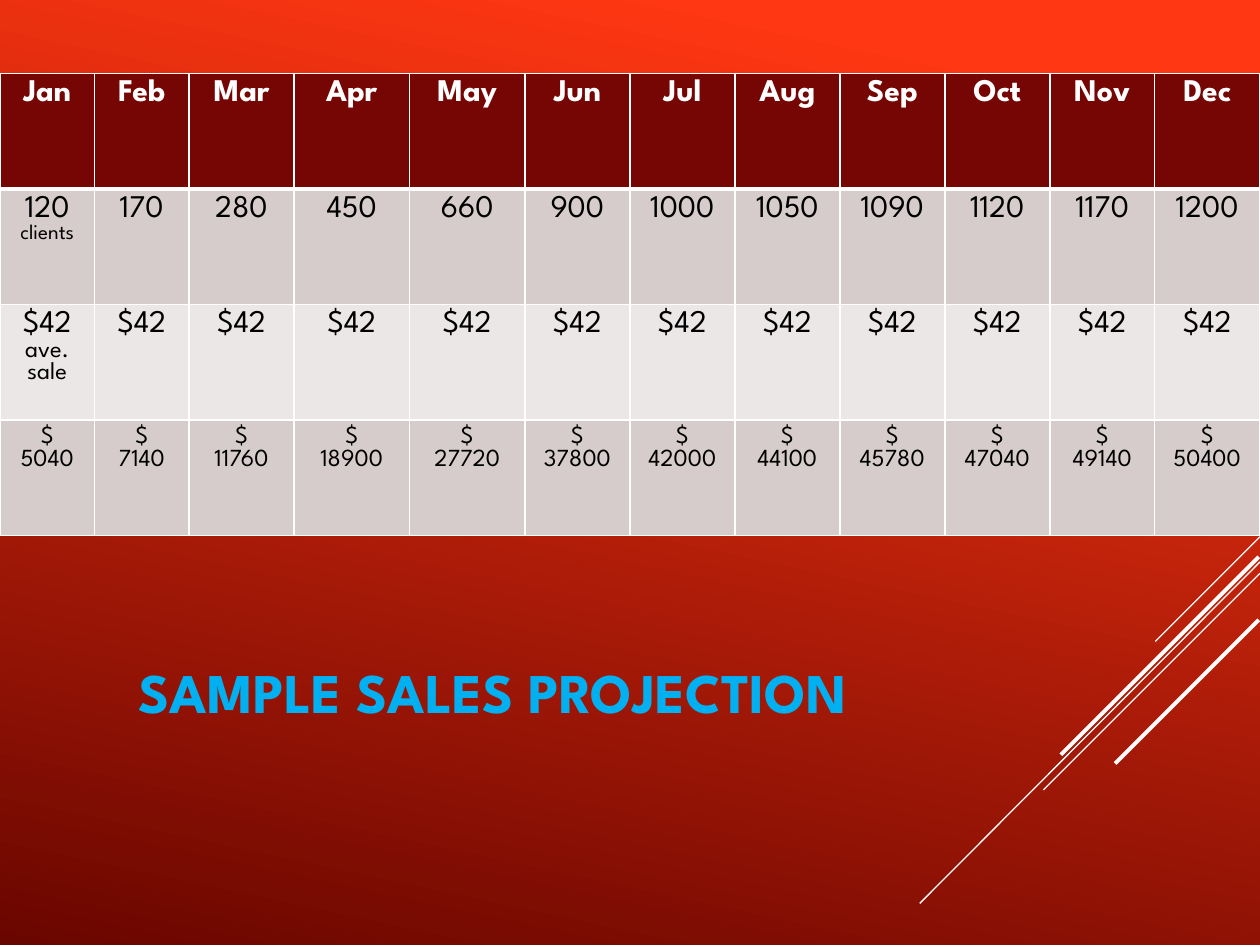
from dataclasses import dataclass

import pptx
import pptx.dml.color
import pptx.enum.shapes
import pptx.enum.text
import pptx.oxml
import pptx.oxml.ns
import pptx.util
from lxml import etree

Pt = pptx.util.Pt
RGBColor = pptx.dml.color.RGBColor
ALIGN = pptx.enum.text.PP_ALIGN

WHITE = RGBColor(0xFF, 0xFF, 0xFF)
BLACK = RGBColor(0x00, 0x00, 0x00)
BRIGHT_RED = RGBColor(0xFF, 0x37, 0x12)
DEEP_RED = RGBColor(0x6A, 0x06, 0x00)
HEADER_RED = RGBColor(0x76, 0x06, 0x03)
BAND_DARK = RGBColor(0xD6, 0xCC, 0xCC)
BAND_LIGHT = RGBColor(0xEC, 0xE7, 0xE7)
TITLE_BLUE = RGBColor(0x00, 0xB0, 0xF0)

FONT = "League Spartan"
MONTHS = "Jan Feb Mar Apr May Jun Jul Aug Sep Oct Nov Dec".split()
CLIENTS = [120, 170, 280, 450, 660, 900, 1000, 1050, 1090, 1120, 1170, 1200]
AVERAGE_SALE = 42
COLUMN_WIDTHS = [54, 54, 60, 66, 66] + [60] * 7
ROW_HEIGHT = 66
TABLE_TOP = 42


@dataclass(frozen=True)
class Stripe:
    x1: float
    y1: float
    x2: float
    y2: float
    width: float


@dataclass(frozen=True)
class Row:
    values: list[str]
    fill: RGBColor
    size: int = 18
    note: str = ""
    note_size: int = 12
    color: RGBColor = BLACK
    bold: bool = False
    top: int = 1
    bottom: int = 1


STRIPES = [
    Stripe(720, 306.7, 660.2, 366.5, 0.75),
    Stripe(720, 321.1, 525.6, 516.2, 0.75),
    Stripe(720, 327.6, 596.2, 451.4, 0.75),
    Stripe(719.3, 318.2, 606.2, 431.3, 2.25),
    Stripe(719.3, 354.2, 637.2, 436.3, 2.25),
]

ROWS = [
    Row(MONTHS, HEADER_RED, color=WHITE, bold=True, bottom=3),
    Row([str(n) for n in CLIENTS], BAND_DARK, note="clients", top=3),
    Row([f"${AVERAGE_SALE}"] * len(MONTHS), BAND_LIGHT, note="ave. sale", note_size=14),
    Row([f"$\n{n * AVERAGE_SALE}" for n in CLIENTS], BAND_DARK, size=14),
]


def write(p, text: str, *, size: float, color: RGBColor, bold: bool = False,
          align=ALIGN.CENTER) -> None:
    p.alignment = align
    r = p.add_run()
    r.text = text
    r.font.name = FONT
    r.font.size = Pt(size)
    r.font.bold = bold
    r.font.color.rgb = color


def draw_stripe(s, stripe: Stripe) -> None:
    sp = s.shapes.add_connector(
        pptx.enum.shapes.MSO_CONNECTOR.STRAIGHT,
        Pt(stripe.x1), Pt(stripe.y1), Pt(stripe.x2), Pt(stripe.y2))
    sp.line.color.rgb = WHITE
    sp.line.width = Pt(stripe.width)
    etree.SubElement(sp._element.spPr, pptx.oxml.ns.qn("a:effectLst"))


def set_borders(cell, top: int, bottom: int) -> None:
    tcPr = cell._tc.get_or_add_tcPr()
    for side, width in (("L", 1), ("R", 1), ("T", top), ("B", bottom)):
        tcPr.append(pptx.oxml.parse_xml(
            f'<a:ln{side} {pptx.oxml.ns.nsdecls("a")} w="{Pt(width)}">'
            f'<a:solidFill><a:srgbClr val="{WHITE}"/></a:solidFill></a:ln{side}>'))


def fill_row(table, index: int, row: Row) -> None:
    table.rows[index].height = Pt(ROW_HEIGHT)
    for column, value in enumerate(row.values):
        cell = table.cell(index, column)
        set_borders(cell, row.top, row.bottom)
        cell.fill.solid()
        cell.fill.fore_color.rgb = row.fill
        lines = [(text, row.size) for text in value.split("\n")]
        if row.note and column == 0:
            lines.append((row.note, row.note_size))
        tf = cell.text_frame
        for i, (text, size) in enumerate(lines):
            p = tf.add_paragraph() if i else tf.paragraphs[0]
            write(p, text, size=size, color=row.color, bold=row.bold)


def draw_table(s) -> None:
    table = s.shapes.add_table(
        len(ROWS), len(MONTHS), Pt(0), Pt(TABLE_TOP),
        Pt(sum(COLUMN_WIDTHS)), Pt(ROW_HEIGHT * len(ROWS))).table
    for column, width in zip(table.columns, COLUMN_WIDTHS):
        column.width = Pt(width)
    for index, row in enumerate(ROWS):
        fill_row(table, index, row)


def draw_title(s) -> None:
    sp = s.shapes.title
    sp.left, sp.top, sp.width, sp.height = Pt(72), Pt(372), Pt(462), Pt(46)
    tf = sp.text_frame
    tf.word_wrap = True
    tf.auto_size = pptx.enum.text.MSO_AUTO_SIZE.SHAPE_TO_FIT_TEXT
    tf.vertical_anchor = pptx.enum.text.MSO_ANCHOR.TOP
    write(tf.paragraphs[0], "SAMPLE SALES PROJECTION", size=32,
          color=TITLE_BLUE, bold=True, align=ALIGN.LEFT)


def paint_background(s) -> None:
    fill = s.background.fill
    fill.gradient()
    fill.gradient_angle = 360 - 102
    stops = ((0.1, BRIGHT_RED), (1, DEEP_RED))
    for stop, (position, color) in zip(fill.gradient_stops, stops):
        stop.position = position
        stop.color.rgb = color


def main() -> None:
    prs = pptx.Presentation()
    prs.slide_width, prs.slide_height = Pt(720), Pt(540)
    s = prs.slides.add_slide(prs.slide_layouts.get_by_name("Title Only"))
    paint_background(s)
    for stripe in STRIPES:
        draw_stripe(s, stripe)
    draw_table(s)
    draw_title(s)
    prs.save("out.pptx")


if __name__ == "__main__":
    main()
